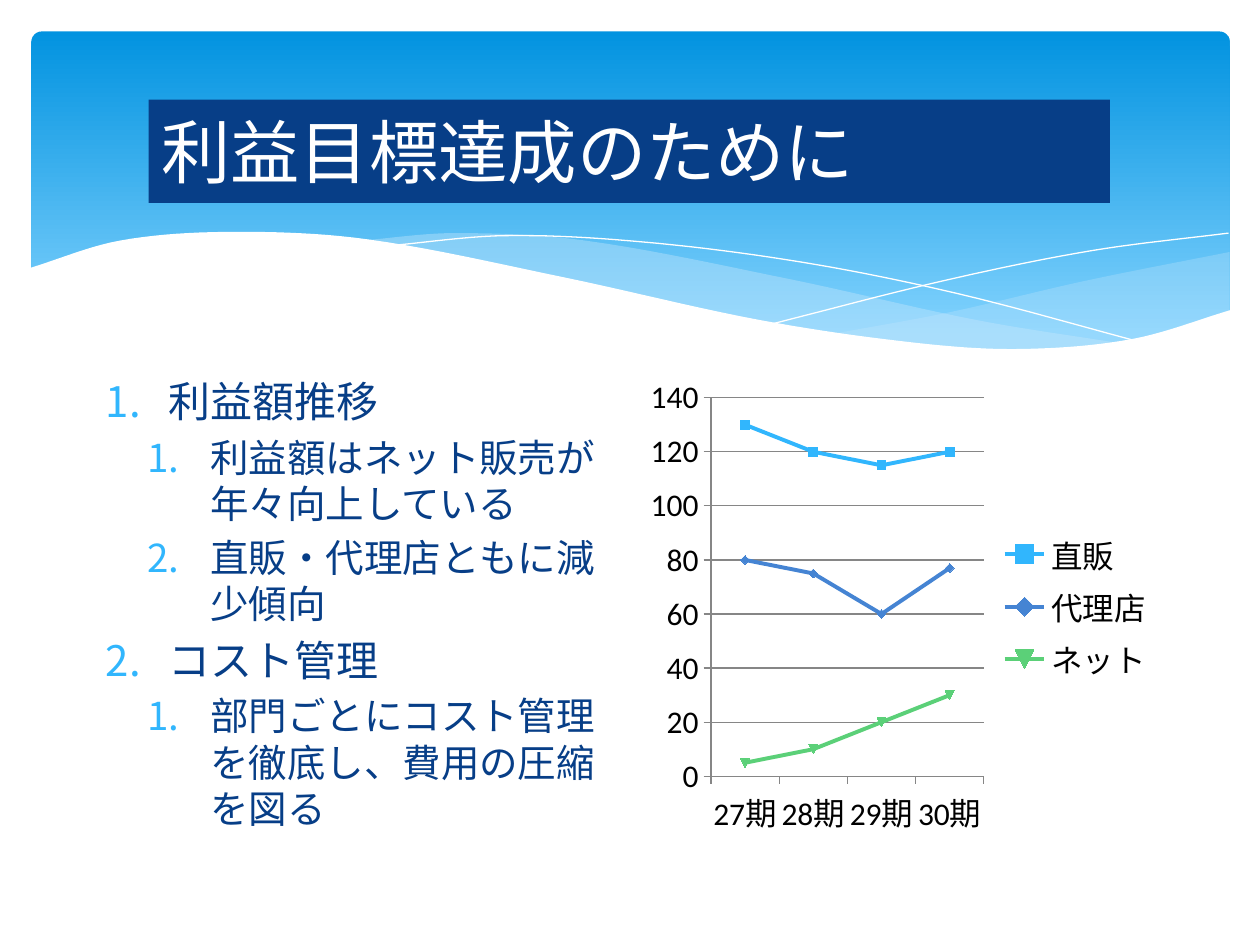
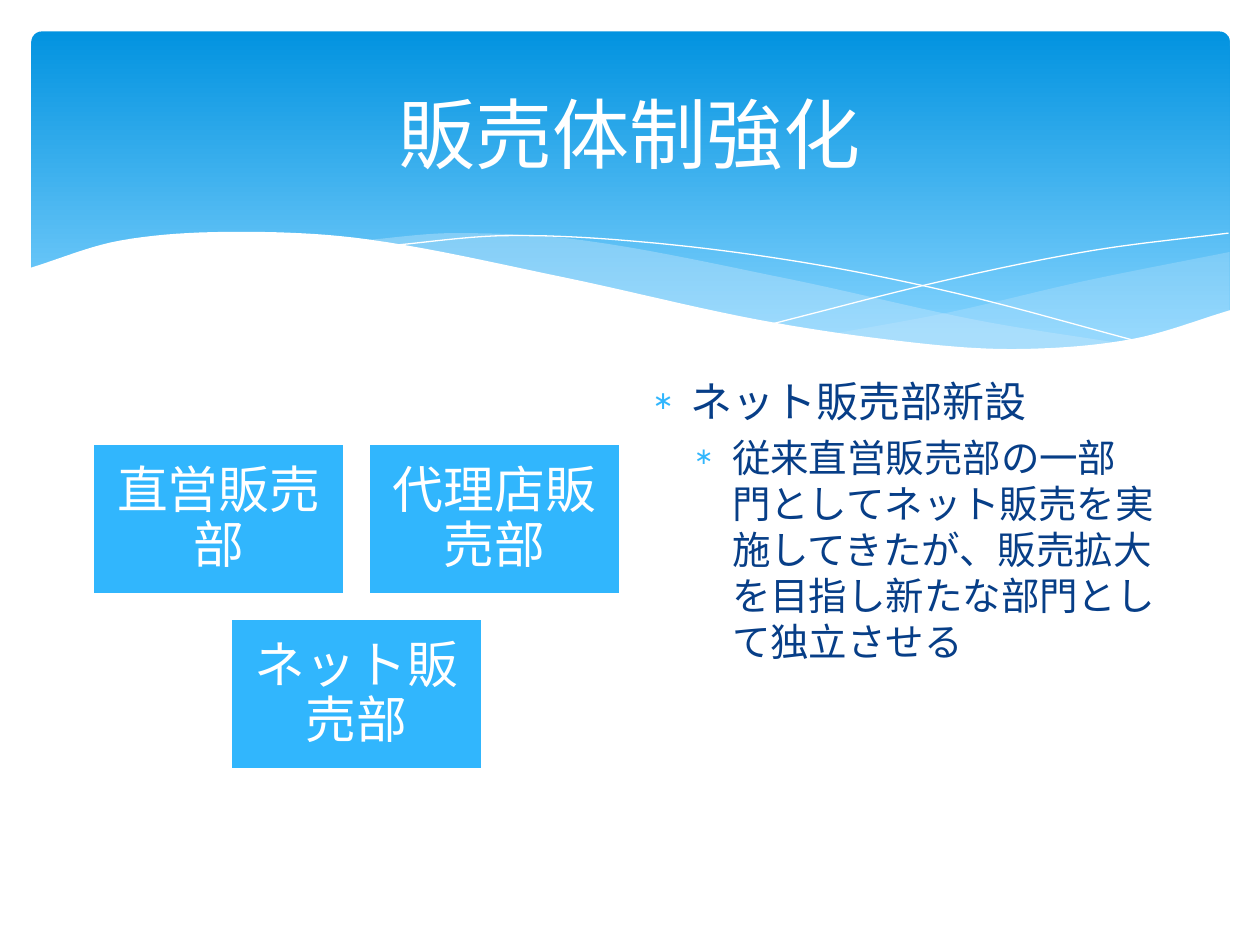
from itertools import pairwise
from lxml.etree import SubElement
from pptx import Presentation
from pptx.chart.data import CategoryChartData
from pptx.dml.color import RGBColor
from pptx.enum.chart import XL_CHART_TYPE, XL_LEGEND_POSITION, XL_TICK_MARK
from pptx.enum.shapes import MSO_SHAPE
from pptx.enum.text import MSO_ANCHOR, MSO_AUTO_SIZE, PP_ALIGN
from pptx.oxml.ns import qn
from pptx.util import Inches, Pt

WHITE = RGBColor(0xFF, 0xFF, 0xFF)
BLACK = RGBColor(0, 0, 0)
GRAY = RGBColor(0x86, 0x86, 0x86)
NAVY = RGBColor(0x07, 0x3E, 0x87)
SKY = RGBColor(0x31, 0xB6, 0xFD)
BLUE = RGBColor(0x45, 0x84, 0xD3)
GREEN = RGBColor(0x5B, 0xD0, 0x78)
DEEP = RGBColor(0x02, 0x93, 0xE0)
LIGHT = RGBColor(0x83, 0xD3, 0xFE)
MIST = RGBColor(0xC6, 0xE7, 0xFC)

LATIN = "Calibri"
KANJI = "Noto Sans CJK JP"
LEFT = (0.74, 2.93, 4.18, 3.77)
RIGHT = (5.08, 2.93, 4.18, 3.77)
BAND = (0.25, 0.25, 9.51, 2.7)
STEPS = 10

RIGHT_TOP = [(6.61, 2.65), (7.53, 2.48), (8.61, 2.23), (9.76, 2)]
RIGHT_BASE = [(6.61, 2.65), (7.32, 2.74), (8.1, 2.78), (8.97, 2.7), (9.76, 2.47)]
LONG_TOP = [(2.86, 1.91), (3.61, 1.85), (4.65, 1.91), (6.29, 2.22), (7.75, 2.54),
            (8.93, 2.73)]
LONG_BASE = [(2.86, 1.91), (4.49, 2.22), (6.01, 2.55), (7.22, 2.74), (8.1, 2.78),
             (8.93, 2.73)]
FALL = [(3.09, 1.95), (4.01, 1.87), (5.1, 1.92), (6.36, 2.08), (7.6, 2.33), (9.07, 2.72)]
RISE = [(6.13, 2.57), (7.48, 2.23), (8.66, 1.99), (9.75, 1.85)]
PAGE_TOP = [(0.23, 2.13), (0.95, 1.91), (1.85, 1.84), (2.92, 1.9), (4.47, 2.2),
            (6.03, 2.54), (7.26, 2.72), (8.1, 2.77), (8.99, 2.69), (9.77, 2.46)]
PAGE_BASE = [(0.23, 3.29), (9.77, 3.29)]


def apply(item, **values):
    for name, value in values.items():
        setattr(item, name, value)


def style(font, size, color, face=LATIN):
    apply(font, size=Pt(size), name=face)
    font.color.rgb = color


def place(shape, box):
    for name, value in zip(("left", "top", "width", "height"), box):
        setattr(shape, name, Inches(value))


def paint(shape, fill=None, alpha=100):
    shape.shadow.inherit = False
    shape.line.fill.background()
    if fill is None:
        shape.fill.background()
        return
    shape.fill.solid()
    shape.fill.fore_color.rgb = fill
    if alpha < 100:
        color = shape.element.spPr.find(".//" + qn("a:srgbClr"))
        SubElement(color, qn("a:alpha")).set("val", str(alpha * 1000))


def slope(start, end):
    return (end[1] - start[1]) / (end[0] - start[0])


def smooth(knots):
    last = len(knots) - 1
    slopes = [slope(knots[max(i - 1, 0)], knots[min(i + 1, last)])
              for i in range(last + 1)]
    spots = [knots[0]]
    for (start, end), (rise, fall) in zip(pairwise(knots), pairwise(slopes)):
        width = end[0] - start[0]
        for step in range(1, STEPS + 1):
            t = step / STEPS
            blend = t * t * (3 - 2 * t)
            bend = t * (1 - t) * ((1 - t) * rise - t * fall)
            y = start[1] + blend * (end[1] - start[1]) + width * bend
            spots.append((start[0] + t * width, y))
    return spots


def outline(slide, spots, close):
    spots = [(Inches(x), Inches(y)) for x, y in spots]
    pen = slide.shapes.build_freeform(*spots[0], scale=1.0)
    pen.add_line_segments(spots[1:], close=close)
    return pen.convert_to_shape()


def wave(slide, top, base, fill, alpha=100):
    shape = outline(slide, smooth(top) + smooth(base)[::-1], True)
    paint(shape, fill, alpha)
    return shape


def curve(slide, knots):
    shape = outline(slide, smooth(knots), False)
    paint(shape)
    shape.line.color.rgb = WHITE
    shape.line.width = Pt(0)
    return shape


def panel(slide, box):
    shape = slide.shapes.add_shape(MSO_SHAPE.ROUNDED_RECTANGLE, *map(Inches, box))
    paint(shape)
    shape.adjustments[0] = 0.03
    shape.fill.gradient()
    shape.fill.gradient_angle = 270
    for stop, spot, color in zip(shape.fill.gradient_stops, (0, 0.9), (DEEP, LIGHT)):
        stop.position = spot
        stop.color.rgb = color
    return shape


def banner(slide, layout):
    parts = [
        panel(slide, BAND),
        wave(slide, RIGHT_TOP, RIGHT_BASE, MIST, 29),
        wave(slide, LONG_TOP, LONG_BASE, MIST, 40),
        curve(slide, FALL),
        curve(slide, RISE),
        wave(slide, PAGE_TOP, PAGE_BASE, WHITE),
    ]
    for order, part in enumerate(parts, 2):
        layout.shapes.element.insert(order, part.element)


def heading(slide, text, box, size, align, fill=None):
    title = slide.shapes.title
    place(title, box)
    if fill is not None:
        title.fill.solid()
        title.fill.fore_color.rgb = fill
    frame = title.text_frame
    frame.text = text
    apply(frame, auto_size=MSO_AUTO_SIZE.NONE, vertical_anchor=MSO_ANCHOR.MIDDLE)
    frame.paragraphs[0].alignment = align
    style(frame.paragraphs[0].runs[0].font, size, WHITE)


def bullet(para, left, hang, face, size, tag, **values):
    props = para._p.get_or_add_pPr()
    props.set("marL", str(Inches(left)))
    props.set("indent", str(Inches(-hang)))
    color = SubElement(props, qn("a:buClr"))
    SubElement(color, qn("a:srgbClr")).set("val", str(SKY))
    SubElement(props, qn("a:buSzPct")).set("val", str(size * 1000))
    SubElement(props, qn("a:buFont")).set("typeface", face)
    mark = SubElement(props, qn(tag))
    for name, value in values.items():
        mark.set(name, value)


def points(slide, box, items, hang, face, size, tag, **values):
    body = slide.placeholders[1]
    place(body, box)
    frame = body.text_frame
    frame.auto_size = MSO_AUTO_SIZE.NONE
    for order, (level, text) in enumerate(items):
        para = frame.add_paragraph() if order else frame.paragraphs[0]
        apply(para, level=level, text=text)
        style(para.runs[0].font, (24, 22)[level], NAVY, face)
        bullet(para, hang + level * 0.33, hang, face, size, tag, **values)


def trend(slide, box):
    sales = {
        "直販": ((130, 120, 115, 120), SKY),
        "代理店": ((80, 75, 60, 77), BLUE),
        "ネット": ((5, 10, 20, 30), GREEN),
    }
    data = CategoryChartData()
    data.categories = [f"{term}期" for term in range(27, 31)]
    for name, (values, _) in sales.items():
        data.add_series(name, values)
    frame = slide.shapes.add_chart(XL_CHART_TYPE.LINE_MARKERS, *map(Inches, box), data)
    chart = frame.chart
    apply(chart, has_title=False, has_legend=True)
    style(chart.font, 18, BLACK)
    apply(chart.legend, position=XL_LEGEND_POSITION.RIGHT, include_in_layout=False)
    apply(chart.value_axis, minimum_scale=0, maximum_scale=140, major_unit=20,
          has_major_gridlines=True)
    for axis in (chart.category_axis, chart.value_axis):
        axis.major_tick_mark = XL_TICK_MARK.OUTSIDE
        axis.format.line.color.rgb = GRAY
    chart.value_axis.major_gridlines.format.line.color.rgb = GRAY
    for row in chart.plots[0].series:
        color = sales[row.name][1]
        row.smooth = False
        row.format.line.width = Pt(2.25)
        row.marker.format.fill.solid()
        row.marker.format.fill.fore_color.rgb = color
        for part in (row, row.marker):
            part.format.line.color.rgb = color


def card(slide, text, box):
    shape = slide.shapes.add_shape(MSO_SHAPE.RECTANGLE, *map(Inches, box))
    paint(shape, SKY)
    shape.line.color.rgb = WHITE
    shape.line.width = Pt(1.25)
    frame = shape.text_frame
    frame.text = text
    apply(frame, word_wrap=True, vertical_anchor=MSO_ANCHOR.MIDDLE)
    for side in ("left", "top", "right", "bottom"):
        setattr(frame, "margin_" + side, Inches(0.12))
    para = frame.paragraphs[0]
    apply(para, alignment=PP_ALIGN.CENTER, line_spacing=0.9)
    style(para.runs[0].font, 29, WHITE)


def teams(slide, box, names):
    left, top, width, height = box
    gap, wide, tall = 0.2, 1.99, 1.19
    rows = [names[i:i + 2] for i in range(0, len(names), 2)]
    y = top + (height - len(rows) * (tall + gap) + gap) / 2
    for row in rows:
        x = left + (width - len(row) * (wide + gap) + gap) / 2
        for name in row:
            card(slide, name, (x, y, wide, tall))
            x += wide + gap
        y += tall + gap


def profit(slide):
    heading(slide, "利益目標達成のために", (1.18, 0.79, 7.63, 0.82), 39.6,
            PP_ALIGN.LEFT, NAVY)
    items = [
        (0, "利益額推移"),
        (1, "利益額はネット販売が年々向上している"),
        (1, "直販・代理店ともに減少傾向"),
        (0, "コスト管理"),
        (1, "部門ごとにコスト管理を徹底し、費用の圧縮を図る"),
    ]
    points(slide, LEFT, items, 0.5, KANJI, 100, "a:buAutoNum", type="arabicPeriod")
    trend(slide, RIGHT)


def reform(slide):
    heading(slide, "販売体制強化", (0.5, 0.37, 9, 1.37), 44, PP_ALIGN.CENTER)
    teams(slide, LEFT, ["直営販売部", "代理店販売部", "ネット販売部"])
    items = [
        (0, "ネット販売部新設"),
        (1, "従来直営販売部の一部門としてネット販売を実施してきたが、"
            "販売拡大を目指し新たな部門として独立させる"),
    ]
    points(slide, RIGHT, items, 0.3, LATIN, 60, "a:buChar", char="∗")


def main():
    deck = Presentation()
    apply(deck, slide_width=Inches(10), slide_height=Inches(7.5))
    layout = deck.slide_layouts[1]
    first, second = [deck.slides.add_slide(layout) for _ in range(2)]
    banner(first, layout)
    profit(first)
    reform(second)
    deck.save("out.pptx")


if __name__ == "__main__":
    main()
